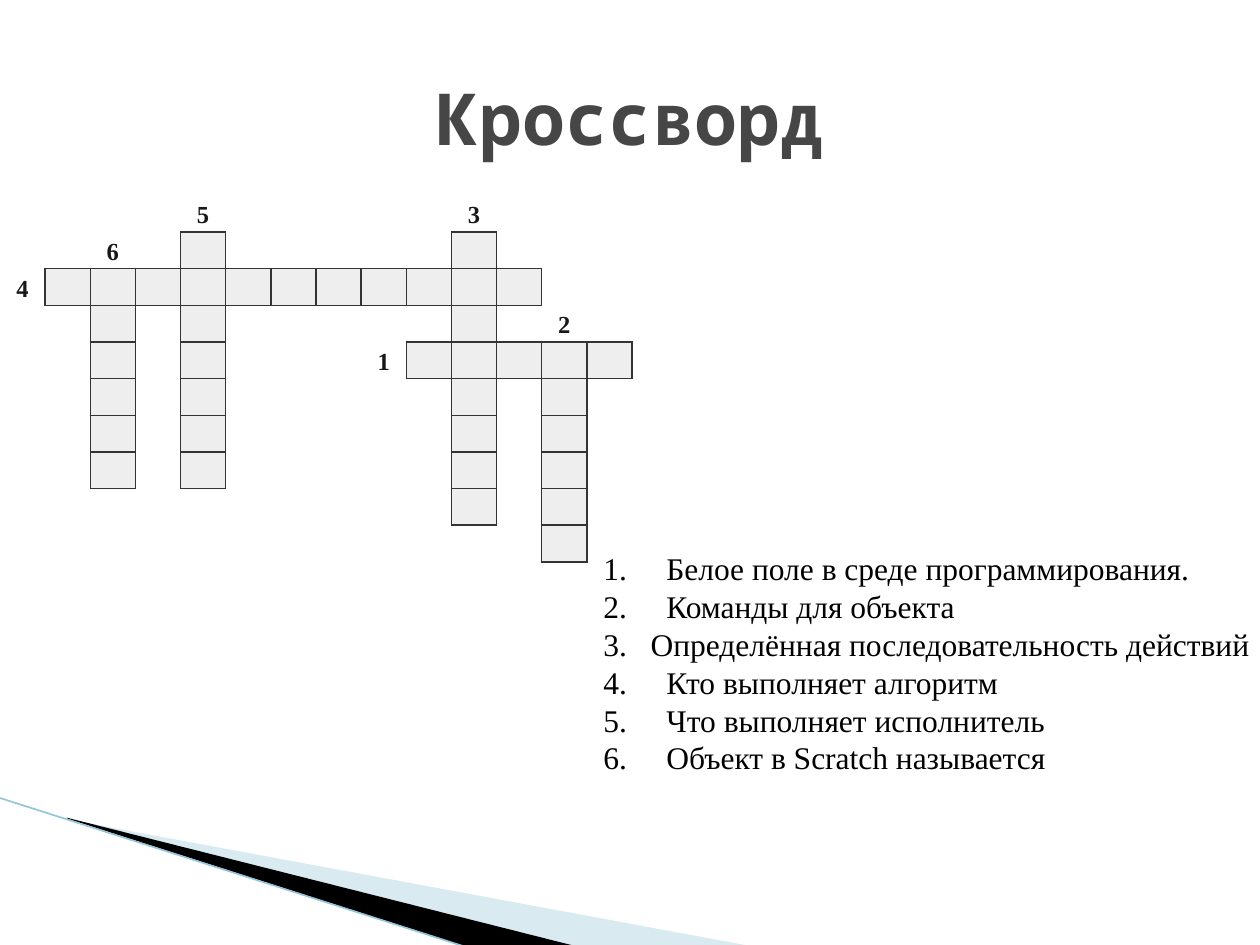
from dataclasses import dataclass

from lxml import etree
from pptx import Presentation
from pptx.dml.color import RGBColor
from pptx.enum.shapes import MSO_CONNECTOR
from pptx.enum.text import MSO_ANCHOR, PP_ALIGN
from pptx.oxml.ns import qn
from pptx.util import Pt

CENTER, JUSTIFY = PP_ALIGN.CENTER, PP_ALIGN.JUSTIFY
MIDDLE = MSO_ANCHOR.MIDDLE
STRAIGHT = MSO_CONNECTOR.STRAIGHT
SERIF, MONO = "Times New Roman", "Noto Sans Mono"
ROWS, COLUMNS = 10, 14
TABLE_TOP, TABLE_WIDTH, TABLE_HEIGHT = 111.6, 361.5, 209.5
EDGE_COLOR, SQUARE_COLOR = "333333", "EEEEEE"


@dataclass
class Word:
    number: int
    row: int
    column: int
    length: int
    across: bool

    def squares(self) -> list[tuple[int, int]]:
        return [(self.row, self.column + step) if self.across
                else (self.row + step, self.column)
                for step in range(self.length)]

    def label_square(self) -> tuple[int, int]:
        """The number stands just before the first letter."""
        if self.across:
            return self.row, self.column - 1
        return self.row - 1, self.column


@dataclass
class Clue:
    text: str
    indent: float = 36


WORDS = [
    Word(1, 4, 9, 5, True),
    Word(2, 4, 12, 6, False),
    Word(3, 1, 10, 8, False),
    Word(4, 2, 1, 11, True),
    Word(5, 1, 4, 7, False),
    Word(6, 2, 2, 6, False),
]
CLUES = [
    Clue("Белое поле в среде программирования."),
    Clue("Команды для объекта"),
    Clue("Определённая последовательность действий", 27),
    Clue("Кто выполняет алгоритм"),
    Clue("Что выполняет исполнитель"),
    Clue("Объект в Scratch называется"),
]


def color(value: str) -> RGBColor:
    return RGBColor.from_string(value)


def add_span(para, text: str, font: str, size: float, ink: str, bold=False) -> None:
    span = para.add_run()
    span.text = text
    span.font.name = font
    span.font.size = Pt(size)
    span.font.bold = bold
    span.font.color.rgb = color(ink)


def add_box(page, left: float, top: float, width: float, height: float):
    box = page.shapes.add_textbox(Pt(left), Pt(top), Pt(width), Pt(height))
    box.text_frame.word_wrap = True
    return box


def add_wedge(page, points: list[tuple[float, float]], fill: str, opacity=100) -> None:
    corners = [(Pt(x), Pt(y)) for x, y in points]
    builder = page.shapes.build_freeform(*corners[0])
    builder.add_line_segments(corners[1:], close=True)
    wedge = builder.convert_to_shape()
    wedge.shadow.inherit = False
    wedge.line.fill.background()
    wedge.fill.solid()
    wedge.fill.fore_color.rgb = color(fill)
    if opacity < 100:
        tint = wedge._element.spPr.find(".//" + qn("a:srgbClr"))
        etree.SubElement(tint, qn("a:alpha"), val=str(opacity * 1000))


def set_borders(cell, drawn: dict[str, bool]) -> None:
    properties = cell._tc.get_or_add_tcPr()
    for index, (side, visible) in enumerate(drawn.items()):
        edge = etree.Element(qn(f"a:ln{side}"), w=str(Pt(1)))
        if visible:
            fill = etree.SubElement(edge, qn("a:solidFill"))
            etree.SubElement(fill, qn("a:srgbClr"), val=EDGE_COLOR)
        else:
            etree.SubElement(edge, qn("a:noFill"))
        properties.insert(index, edge)


def add_decor(page) -> None:
    add_wedge(page, [(39.6, 468.5), (428.4, 540.5), (328.3, 540.5), (39.6, 468)],
              "A0CBDC", 40)
    add_wedge(page, [(38.2, 467.3), (329, 540.7), (267.8, 541.4), (38.9, 468)],
              "000000")
    line = page.shapes.add_connector(STRAIGHT, Pt(-0.7), Pt(455.8), Pt(267.1), Pt(541.4))
    line.line.color.rgb = color("97C5D8")
    line.line.width = Pt(0.95)
    etree.SubElement(line._element.spPr, qn("a:effectLst"))


def add_crossword(page, words: list[Word]) -> None:
    squares = {square for word in words for square in word.squares()}
    labels = {word.label_square(): str(word.number) for word in words}
    table = page.shapes.add_table(ROWS, COLUMNS, Pt(0), Pt(TABLE_TOP),
                                  Pt(TABLE_WIDTH), Pt(TABLE_HEIGHT)).table
    table.first_row = table.horz_banding = False
    for column in table.columns:
        column.width = Pt(TABLE_WIDTH / COLUMNS)
    for row in table.rows:
        row.height = Pt(TABLE_HEIGHT / ROWS)

    for r in range(ROWS):
        for c in range(COLUMNS):
            cell = table.cell(r, c)
            cell.margin_left = cell.margin_right = 0
            cell.margin_top = cell.margin_bottom = 0
            cell.vertical_anchor = MIDDLE
            filled = (r, c) in squares
            if filled:
                cell.fill.solid()
                cell.fill.fore_color.rgb = color(SQUARE_COLOR)
            else:
                cell.fill.background()
            neighbours = {"L": (r, c - 1), "R": (r, c + 1),
                          "T": (r - 1, c), "B": (r + 1, c)}
            set_borders(cell, {side: filled or square in squares
                               for side, square in neighbours.items()})
            para = cell.text_frame.paragraphs[0]
            para.alignment = CENTER
            para.line_spacing = 1.15
            para.font.size = Pt(14)
            if (r, c) in labels:
                add_span(para, labels[r, c], SERIF, 14, "181818", True)


def add_title(page, text: str) -> None:
    box = add_box(page, 36, 21.6, 648, 90)
    box.text_frame.vertical_anchor = MIDDLE
    para = box.text_frame.paragraphs[0]
    para.alignment = CENTER
    add_span(para, text, MONO, 41, "464646", True)


def add_clues(page, clues: list[Clue]) -> None:
    box = add_box(page, 337.7, 309.6, 447.8, 138.2)
    frame = box.text_frame
    frame.vertical_anchor = MIDDLE
    for number, clue in enumerate(clues, 1):
        para = frame.paragraphs[0] if number == 1 else frame.add_paragraph()
        para.alignment = JUSTIFY
        # Hanging indent: the tab after the number runs to the left margin
        properties = para._p.get_or_add_pPr()
        properties.set("marL", str(Pt(clue.indent)))
        properties.set("indent", str(-Pt(clue.indent)))
        add_span(para, f"{number}.\t{clue.text}", SERIF, 18, "000000")


def main() -> None:
    deck = Presentation()
    deck.slide_width, deck.slide_height = Pt(720), Pt(540)
    page = deck.slides.add_slide(deck.slide_layouts[6])
    add_decor(page)
    add_crossword(page, WORDS)
    add_title(page, "Кроссворд")
    add_clues(page, CLUES)
    deck.save("out.pptx")


if __name__ == "__main__":
    main()
